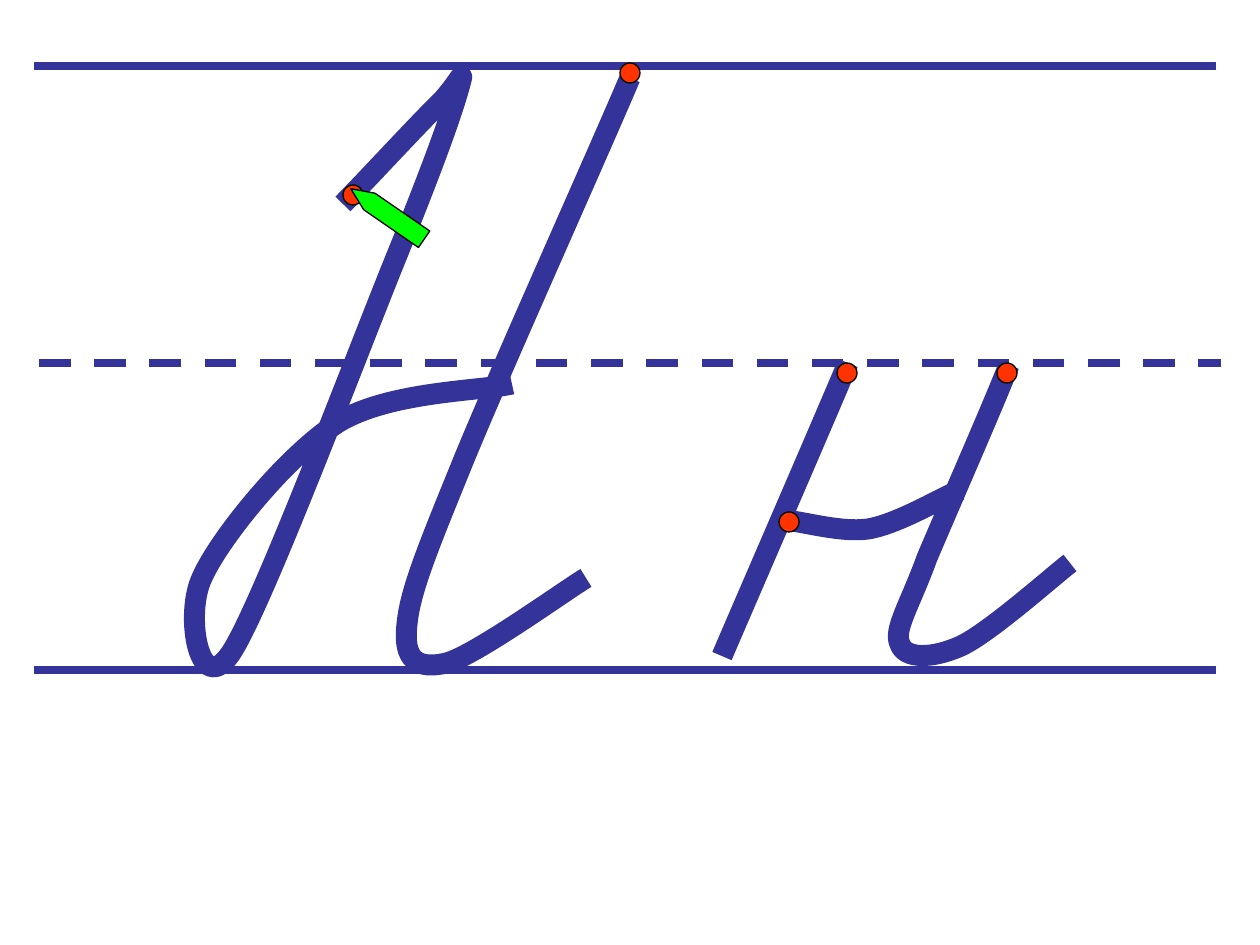
from lxml import etree
from pptx import Presentation
from pptx.dml.color import RGBColor
from pptx.enum.dml import MSO_LINE
from pptx.enum.shapes import MSO_CONNECTOR, MSO_SHAPE
from pptx.oxml.ns import qn
from pptx.util import Pt

DASH = MSO_LINE.DASH
STRAIGHT = MSO_CONNECTOR.STRAIGHT
DOT = MSO_SHAPE.FLOWCHART_CONNECTOR
PENCIL = MSO_SHAPE.PENTAGON

PX = 914400 / 126
COLORS = {"ink": "333399", "dot": "FF3300", "pencil": "00FF00", "edge": "000000"}
DOT_SIZE = 20

# Each stroke is a start point followed by three Bezier points per curve.
CAPITAL_STROKES = [
    [(512, 384), (483, 391), (391, 391), (339, 422),
     (287, 455), (219, 539), (202, 578),
     (184, 616), (200, 704), (233, 650),
     (266, 596), (360, 346), (398, 253),
     (436, 159), (452, 113), (459, 88),
     (466, 63), (460, 82), (441, 102),
     (421, 121), (364, 183), (343, 204)],
    [(586, 578), (563, 592), (476, 655), (447, 663),
     (417, 670), (403, 660), (407, 625),
     (410, 591), (428, 548), (465, 457),
     (503, 365), (596, 158), (630, 78)],
]
SMALL_STROKES = [
    [(722, 656), (743, 607), (822, 425), (848, 363)],
    [(1070, 563), (1052, 577), (989, 633), (961, 646),
     (932, 659), (905, 659), (900, 644),
     (893, 630), (910, 605), (927, 558),
     (946, 513), (993, 406), (1009, 365)],
    [(782, 520), (798, 520), (839, 533), (868, 529),
     (898, 524), (941, 498), (960, 490)],
]
LETTERS = [
    (CAPITAL_STROKES, [(343, 185), (620, 63)]),
    (SMALL_STROKES, [(837, 363), (997, 363), (779, 512)]),
]


def add_stroke(shapes, points):
    """Draw a freeform and turn each three line segments into one curve."""
    builder = shapes.build_freeform(*points[0], scale=PX)
    builder.add_line_segments(points[1:], close=False)
    stroke = builder.convert_to_shape()
    segments = stroke._element.xpath(".//a:lnTo")
    for first in range(0, len(segments), 3):
        curve = etree.Element(qn("a:cubicBezTo"))
        segments[first].addprevious(curve)
        for segment in segments[first:first + 3]:
            curve.append(segment[0])
            segment.getparent().remove(segment)
    stroke.shadow.inherit = False
    stroke.fill.background()
    stroke.line.color.rgb = RGBColor.from_string(COLORS["ink"])
    stroke.line.width = Pt(12)


def add_filled(shapes, kind, left, top, width, height, color):
    shape = shapes.add_shape(kind, *(round(n * PX) for n in (left, top, width, height)))
    shape.shadow.inherit = False
    shape.fill.solid()
    shape.fill.fore_color.rgb = RGBColor.from_string(COLORS[color])
    shape.line.color.rgb = RGBColor.from_string(COLORS["edge"])
    shape.line.width = Pt(0.75)
    return shape


deck = Presentation()
deck.slide_width = round(1260 * PX)
deck.slide_height = round(945 * PX)
page = deck.slides.add_slide(deck.slide_layouts[6])

# Ruled lines
ruling = page.shapes.add_group_shape().shapes
for left, y, dash in [(34, 66, None), (39, 363, DASH), (34, 670, None)]:
    ends = (left, y, left + 1182, y)
    rule = ruling.add_connector(STRAIGHT, *(round(n * PX) for n in ends))
    rule.line.color.rgb = RGBColor.from_string(COLORS["ink"])
    rule.line.width = Pt(4.5)
    rule.line.dash_style = dash
    etree.SubElement(rule._element.spPr, qn("a:effectLst"))

# Letters with their starting dots
for strokes, dots in LETTERS:
    letter = page.shapes.add_group_shape().shapes
    for points in strokes:
        add_stroke(letter, points)
    for left, top in dots:
        add_filled(letter, DOT, left, top, DOT_SIZE, DOT_SIZE, "dot")

pencil = add_filled(page.shapes, PENCIL, 343, 204, 89, 20, "pencil")
pencil.adjustments[0] = 1.12
pencil.rotation = 214.6

deck.save("out.pptx")
